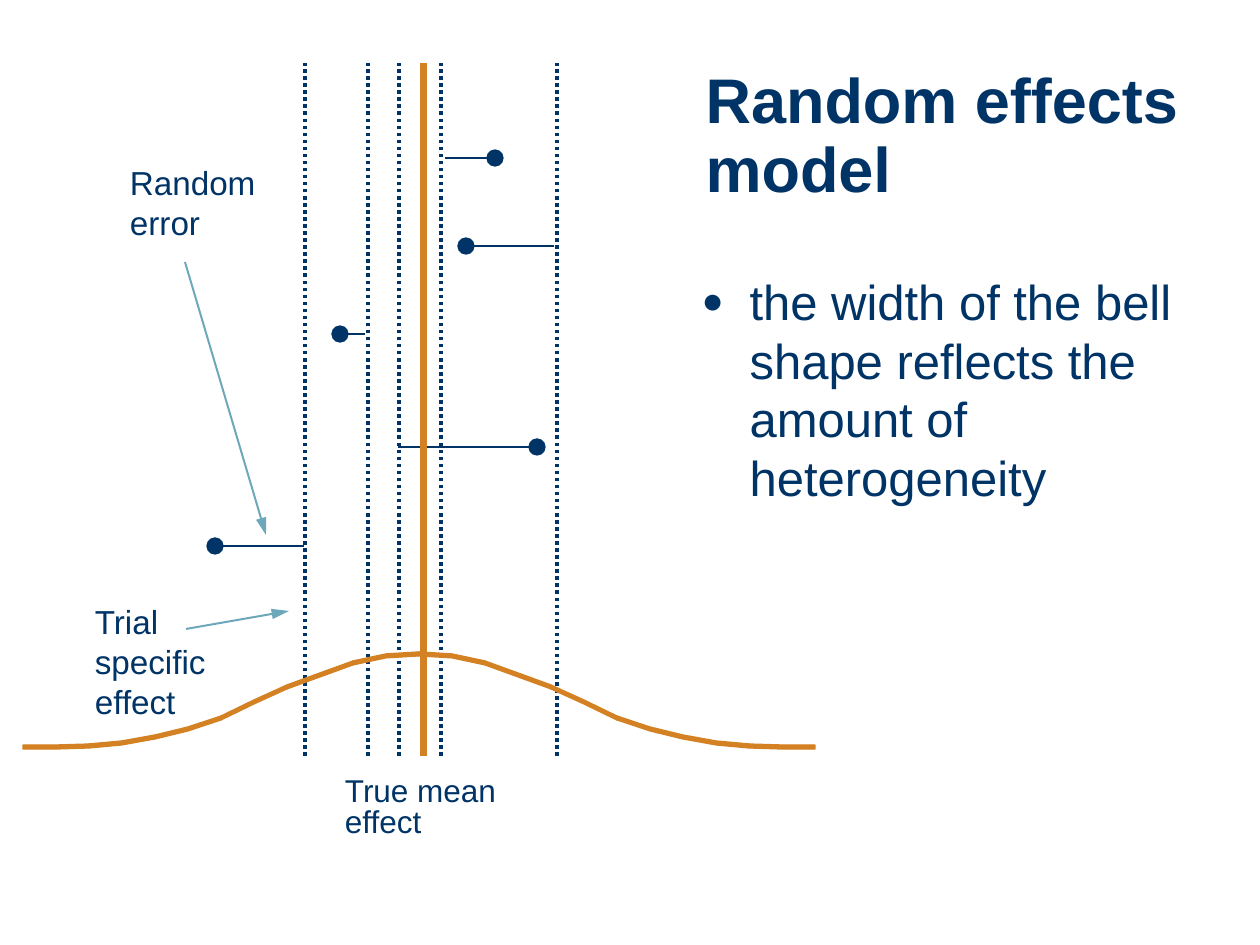
"""Build a slide that explains the random effects model beside a bell curve diagram."""
import pptx
import pptx.dml.color
import pptx.enum.dml
import pptx.enum.shapes
import pptx.enum.text
import pptx.oxml
import pptx.oxml.ns
import pptx.util

SCALE = 914400 / 126
COLORS = {"navy": "003366", "teal": "6DA7BA", "orange": "D38122"}


def format_text(shape, size, bold=False):
    for paragraph in shape.text_frame.paragraphs:
        paragraph.alignment = pptx.enum.text.PP_ALIGN.LEFT
        for run in paragraph.runs:
            run.font.name = "Arial"
            run.font.size = pptx.util.Pt(size)
            run.font.bold = bold
            run.font.color.rgb = pptx.dml.color.RGBColor.from_string(COLORS["navy"])


def add_line(ends, color, width, head=None, head_width="lg"):
    line = slide.shapes.add_connector(
        pptx.enum.shapes.MSO_CONNECTOR.STRAIGHT, *[round(value * SCALE) for value in ends])
    line.line.color.rgb = pptx.dml.color.RGBColor.from_string(COLORS[color])
    line.line.width = pptx.util.Pt(width)
    if head:
        tail = pptx.oxml.parse_xml(
            f'<a:tailEnd {pptx.oxml.ns.nsdecls("a")} type="{head}" w="{head_width}" len="lg"/>')
        line.line._get_or_add_ln().append(tail)
    line._element.spPr.append(
        pptx.oxml.parse_xml(f'<a:effectLst {pptx.oxml.ns.nsdecls("a")}/>'))
    return line


presentation = pptx.Presentation()
presentation.slide_width = pptx.util.Inches(10)
presentation.slide_height = pptx.util.Inches(7.5)
slide = presentation.slides.add_slide(presentation.slide_layouts[1])

title = slide.shapes.title
body = slide.placeholders[1]
for placeholder, box in ((title, (693, 76, 592, 136)), (body, (689, 265, 551, 282))):
    placeholder.left, placeholder.top, placeholder.width, placeholder.height = [
        round(value * SCALE) for value in box]

title._element.spPr.append(pptx.oxml.parse_xml(
    f'<a:prstGeom {pptx.oxml.ns.nsdecls("a")} prst="roundRect"><a:avLst>'
    '<a:gd name="adj" fmla="val 21700"/></a:avLst></a:prstGeom>'))
title.text_frame.text = "Random effects model"
title.text_frame.vertical_anchor = pptx.enum.text.MSO_ANCHOR.BOTTOM
title.text_frame.paragraphs[0].line_spacing = 0.9
format_text(title, 36, bold=True)

body.text_frame.text = "the width of the bell shape reflects the amount of heterogeneity"
bullet_paragraph = body.text_frame.paragraphs[0]
bullet_paragraph.line_spacing = 1.0
bullet_paragraph.space_before = pptx.util.Pt(0)
properties = bullet_paragraph._p.get_or_add_pPr()
indent = round(48 * SCALE)
properties.set("marL", str(indent))
properties.set("indent", str(-indent))
for markup in (
    f'<a:buClr {{}}><a:srgbClr val="{COLORS["navy"]}"/></a:buClr>',
    '<a:buSzPct {} val="75000"/>',
    '<a:buFont {} typeface="Arial"/>',
    '<a:buChar {} char="●"/>',
):
    properties.append(pptx.oxml.parse_xml(markup.format(pptx.oxml.ns.nsdecls("a"))))
format_text(body, 28)

for pointer in ((185, 262, 266, 535), (186, 629, 289, 611)):
    add_line(pointer, "teal", 1.13, "triangle", "med")

for effect_x, observed_x, y in (
    (445, 495, 158), (304, 215, 546), (554, 466, 246), (365, 340, 334), (398, 537, 447),
):
    add_line((effect_x, y, observed_x, y), "navy", 0.75, "oval")

for x in (305, 368, 399, 441, 557):
    trial_line = add_line((x, 756, x, 63), "navy", 2)
    trial_line.line.dash_style = pptx.enum.dml.MSO_LINE.ROUND_DOT
add_line((424, 756, 424, 63), "orange", 4)

curve_center, curve_step, half_thickness = 419, 33, 2
half_curve = [654, 656, 663, 675, 687, 702, 718, 729, 737, 743, 746, 747, 747]
last = len(half_curve) - 1
curve_points = [(curve_center + curve_step * index, half_curve[abs(index)])
                for index in range(-last, last + 1)]
for start in range(0, 2 * last, 2):
    section = curve_points[start:start + 3]
    upper_edge = [(x, y - half_thickness) for x, y in section]
    lower_edge = [(x, y + half_thickness) for x, y in reversed(section)]
    builder = slide.shapes.build_freeform(*upper_edge[0], scale=SCALE)
    builder.add_line_segments(upper_edge[1:] + lower_edge, close=True)
    curve_section = builder.convert_to_shape()
    curve_section.shadow.inherit = False
    curve_section.fill.solid()
    orange = pptx.dml.color.RGBColor.from_string(COLORS["orange"])
    curve_section.fill.fore_color.rgb = orange
    curve_section.line.color.rgb = orange
    curve_section.line.width = pptx.util.Pt(0.75)

for lines, left, top, width, pitch, size in (
    (("Random", "error"), 130, 162, 128, 40, 19),
    (("Trial", "specific", "effect"), 95, 601, 114, 40, 19),
    (("True mean", "effect"), 345, 771, 164, 31, 18),
):
    for index, text in enumerate(lines):
        box = (left, top + index * pitch, width, 40)
        label = slide.shapes.add_textbox(*[round(value * SCALE) for value in box])
        frame = label.text_frame
        frame.margin_left = frame.margin_top = frame.margin_right = frame.margin_bottom = 0
        frame.word_wrap = True
        frame.text = text
        format_text(label, size)

presentation.save("out.pptx")
